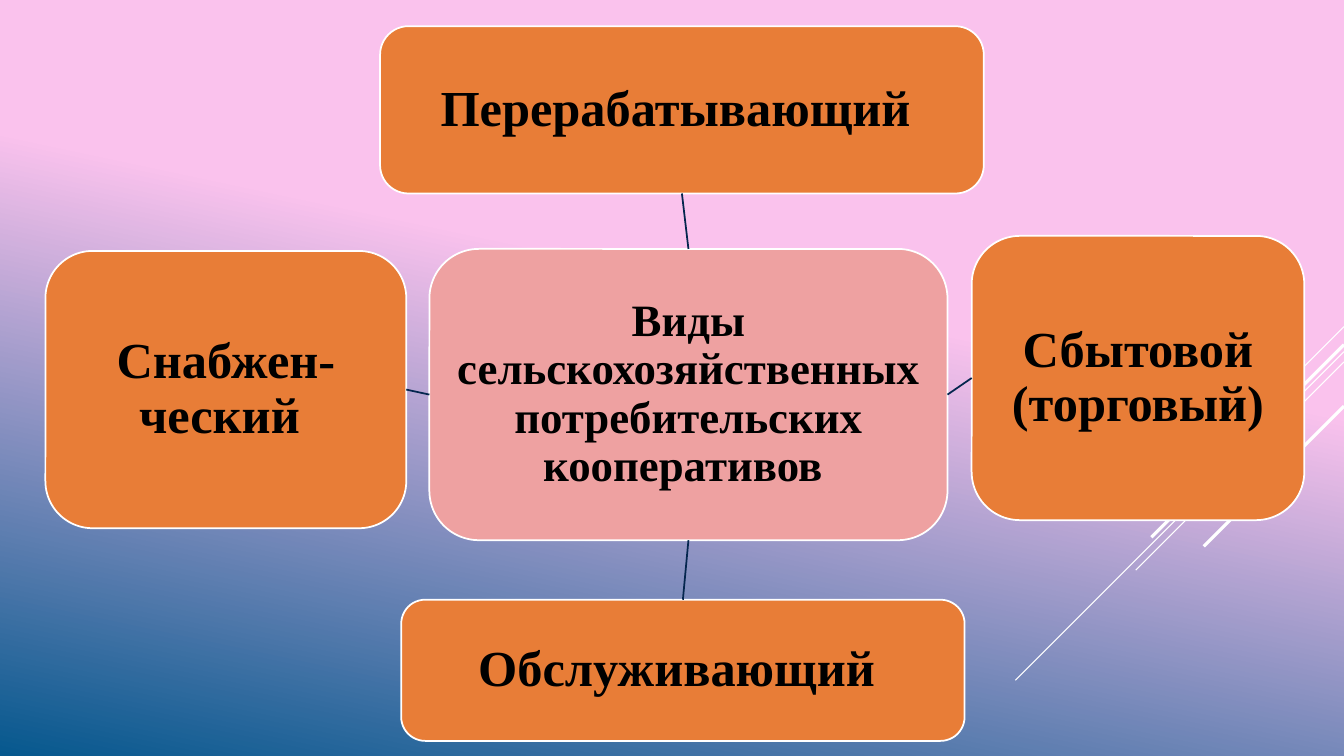
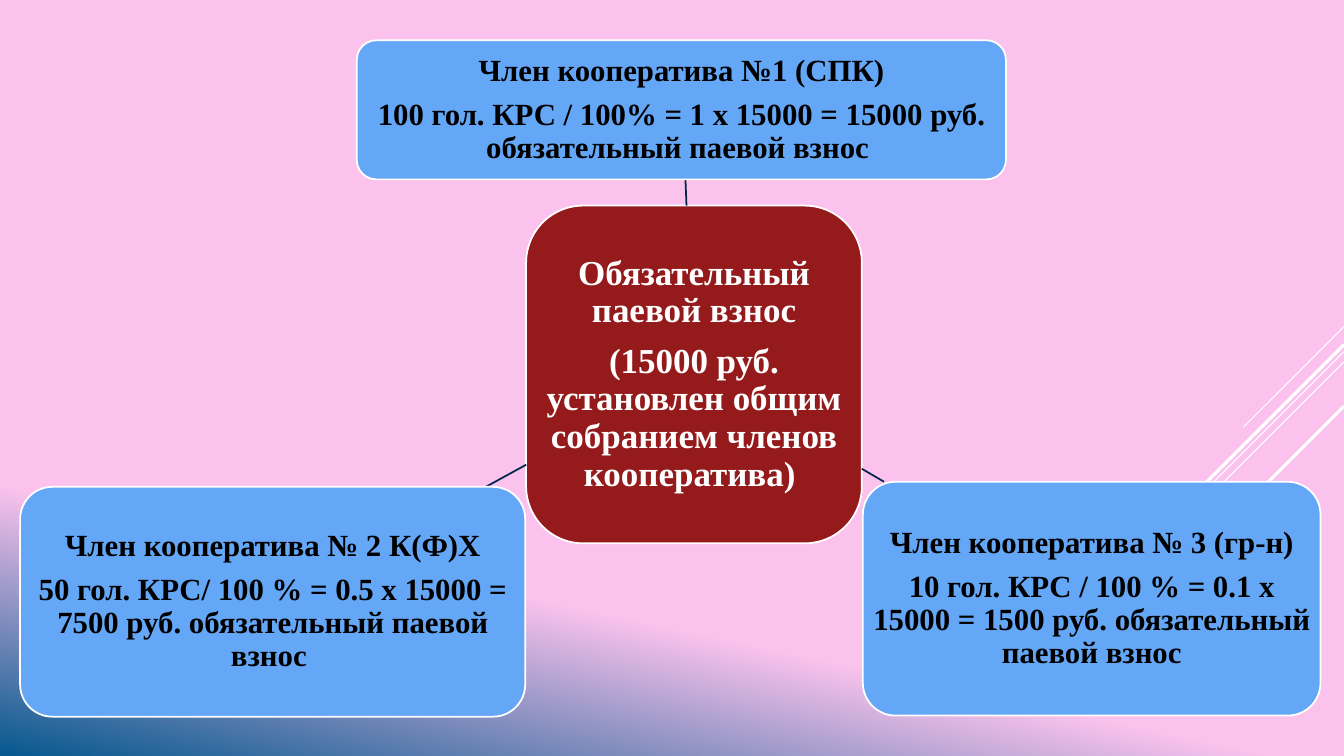
from lxml import etree
from pptx import Presentation
from pptx import util as u
from pptx.dml import color
from pptx.enum import shapes, text
from pptx.oxml import ns

WIDTH, HEIGHT = u.Inches(13.33), u.Inches(7.5)
FONT = "Times New Roman"
PINK, BLUE, WHITE, BLACK = "FAC2ED", "06588E", "FFFFFF", "000000"
ORANGE, ROSE, CRIMSON, SKY, NAVY = "E87D37", "EEA1A1", "941A1B", "64A7F7", "04264E"
TOP, LEFT, BOTTOM, RIGHT = range(4)
STREAKS = [
    (43.2, 7.5, 0.75),
    (46.53, 24.45, 0.75),
    (47.87, 15.5, 0.75),
    (45.6, 14.33, 2.25),
    (53.73, 10.43, 2.25),
]


def rgb(value):
    return color.RGBColor.from_string(value)


def across(percent):
    return round(WIDTH * percent / 100)


def down(percent):
    return round(HEIGHT * percent / 100)


def paint_background(slide, pink_until):
    fill = slide.background.fill
    fill.gradient()
    fill.gradient_angle = 360 - 102
    for stop, position, value in zip(fill.gradient_stops, (pink_until, 1), (PINK, BLUE)):
        stop.position = position
        stop.color.rgb = rgb(value)


def add_line(slide, start, end, line_color=NAVY, weight=1.25):
    connector = slide.shapes.add_connector(
        shapes.MSO_CONNECTOR.STRAIGHT,
        across(start[0]), down(start[1]), across(end[0]), down(end[1]))
    connector.line.color.rgb = rgb(line_color)
    connector.line.width = u.Pt(weight)
    etree.SubElement(connector._element.spPr, ns.qn("a:effectLst"))
    return connector


def join(slide, hub, hub_side, box):
    connector = add_line(slide, (0, 0), (0, 0))
    connector.begin_connect(hub, hub_side)
    connector.end_connect(box, (hub_side + 2) % 4)


def write(shape, paragraphs, size, font_color=BLACK):
    frame = shape.text_frame
    frame.word_wrap = True
    frame.vertical_anchor = text.MSO_ANCHOR.MIDDLE
    frame.margin_left = frame.margin_right = 0
    frame.margin_top = frame.margin_bottom = 0
    frame.text = "\n".join(paragraphs)
    for paragraph in frame.paragraphs:
        paragraph.alignment = text.PP_ALIGN.CENTER
        paragraph.line_spacing = 0.9
        paragraph.space_after = u.Pt(0.35 * size)
        font = paragraph.runs[0].font
        font.name, font.size, font.bold = FONT, u.Pt(size), True
        font.color.rgb = rgb(font_color)


def add_box(slide, area, fill, paragraphs, size, font_color=BLACK, rounding=0.17):
    left, top, width, height = area
    shape = slide.shapes.add_shape(
        shapes.MSO_SHAPE.ROUNDED_RECTANGLE,
        across(left), down(top), across(width), down(height))
    shape.adjustments[0] = rounding
    shape.shadow.inherit = False
    shape.fill.solid()
    shape.fill.fore_color.rgb = rgb(fill)
    shape.line.color.rgb = rgb(WHITE)
    shape.line.width = u.Pt(1.25)
    write(shape, paragraphs, size, font_color)
    return shape


def add_slide(presentation, pink_until):
    slide = presentation.slides.add_slide(presentation.slide_layouts[6])
    paint_background(slide, pink_until)
    for start, run, weight in STREAKS:
        end = (100 - run, start + run * WIDTH / HEIGHT)
        add_line(slide, (100, start), end, WHITE, weight)
    return slide


def build_kinds(presentation):
    slide = add_slide(presentation, 0.4)
    hub = add_box(slide, (31.95, 32.93, 38.55, 38.53), ROSE,
                  ["Виды сельскохозяйственных потребительских кооперативов "], 32)
    kinds = [
        (TOP, (28.28, 3.47, 44.92, 22.13), "Перерабатывающий "),
        (RIGHT, (72.3, 31.2, 24.75, 37.6), "Сбытовой (торговый)"),
        (BOTTOM, (29.85, 79.33, 41.92, 18.67), "Обслуживающий "),
        (LEFT, (3.38, 33.2, 26.85, 36.67), "Снабжен-ческий "),
    ]
    for side, area, name in kinds:
        join(slide, hub, side, add_box(slide, area, ORANGE, [name], 36))


def build_shares(presentation):
    slide = add_slide(presentation, 0.74)
    add_box(slide, (39.15, 27.2, 24.98, 44.67), CRIMSON,
            ["Обязательный паевой взнос",
             "(15000 руб. установлен общим собранием членов кооператива) "],
            25, WHITE)
    members = [
        ((26.55, 5.33, 48.3, 18.4), (51.08, 27.2), (51, 23.6),
         "Член кооператива №1 (СПК)",
         "100 гол. КРС / 100% = 1 х 15000 = 15000 руб. обязательный паевой взнос "),
        ((64.2, 63.73, 34.05, 30.93), (64.12, 62), (65.78, 63.73),
         "Член кооператива № 3 (гр-н)",
         "10 гол. КРС / 100 % = 0.1 х 15000 = 1500 руб. обязательный паевой взнос"),
        ((1.5, 64.4, 37.58, 30.4), (39.15, 61.47), (36.15, 64.4),
         "Член кооператива № 2 К(Ф)Х",
         "50 гол. КРС/ 100 % = 0.5 х 15000 = 7500 руб. обязательный паевой взнос "),
    ]
    for area, start, end, *paragraphs in members:
        add_line(slide, start, end)
        add_box(slide, area, SKY, paragraphs, 22, rounding=0.14)


def main():
    presentation = Presentation()
    presentation.slide_width, presentation.slide_height = WIDTH, HEIGHT
    build_kinds(presentation)
    build_shares(presentation)
    presentation.save("out.pptx")


if __name__ == "__main__":
    main()
